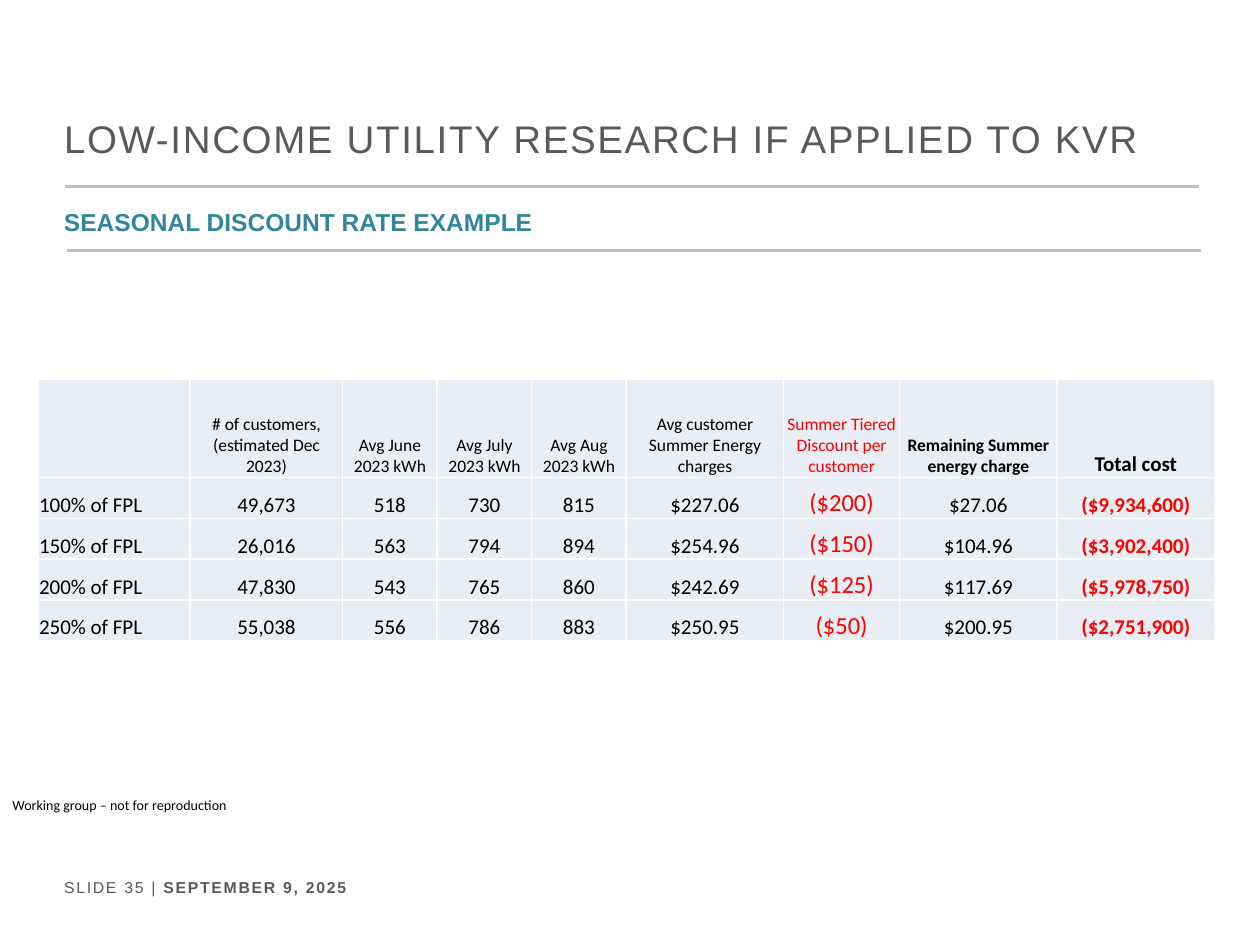
from lxml import etree
from pptx import Presentation
from pptx.dml.color import RGBColor
from pptx.enum.shapes import MSO_CONNECTOR
from pptx.enum.text import MSO_ANCHOR, PP_ALIGN
from pptx.oxml import parse_xml
from pptx.oxml.ns import nsdecls, qn
from pptx.util import Inches, Pt

STRAIGHT = MSO_CONNECTOR.STRAIGHT
TOP, MIDDLE, BOTTOM = MSO_ANCHOR.TOP, MSO_ANCHOR.MIDDLE, MSO_ANCHOR.BOTTOM
LEFT, CENTER = PP_ALIGN.LEFT, PP_ALIGN.CENTER

COLORS = {
    "heading": "595959",
    "subtitle": "31859C",
    "rule": "BFBFBF",
    "cell": "E9EDF4",
    "border": "FFFFFF",
    "text": "000000",
    "discount": "FF0000",
}

presentation = Presentation()
presentation.slide_width = Inches(10)
presentation.slide_height = Inches(7.5)
slide = presentation.slides.add_slide(presentation.slide_layouts[6])
COLUMN = presentation.slide_width // 100
ROW = presentation.slide_height // 75


def write(frame, *texts, size, color="text", font="Calibri", bold=(False,),
          align=LEFT, line_spacing=None, tracking=0):
    frame.word_wrap = True
    paragraph = frame.paragraphs[0]
    paragraph.alignment = align
    if line_spacing:
        paragraph.line_spacing = line_spacing
    for text, is_bold in zip(texts, bold):
        run = paragraph.add_run()
        run.text = text
        run.font.name = font
        run.font.size = Pt(size)
        run.font.bold = is_bold
        run.font.color.rgb = RGBColor.from_string(COLORS[color])
        if tracking:
            run.font._element.set("spc", str(tracking * 100))


def add_box(left, top, width, height, anchor=TOP):
    box = slide.shapes.add_textbox(
        int(left * COLUMN), int(top * ROW), int(width * COLUMN), int(height * ROW))
    box.text_frame.vertical_anchor = anchor
    return box.text_frame


for left, top in [(5.2, 14.8), (5.3, 19.9)]:
    rule = slide.shapes.add_connector(
        STRAIGHT, int(left * COLUMN), int(top * ROW),
        int((left + 90) * COLUMN), int(top * ROW))
    rule.line.color.rgb = RGBColor.from_string(COLORS["rule"])
    rule.line.width = Pt(1.5)
    etree.SubElement(rule._element.spPr, qn("a:effectLst"))

write(add_box(4.1, 69.2, 26.8, 2.5), "SLIDE 35 | ", "SEPTEMBER 9, 2025",
      size=9, color="heading", font="Arial", bold=(False, True), tracking=1)
write(add_box(4.1, 8.1, 91.1, 5.8, MIDDLE),
      "LOW-INCOME UTILITY RESEARCH IF APPLIED TO KVR",
      size=22, color="heading", font="Arial", tracking=1)
write(add_box(4.1, 15, 91, 4.7, MIDDLE), "SEASONAL DISCOUNT RATE EXAMPLE",
      size=14, color="subtitle", font="Arial", bold=(True,), line_spacing=1.2)
write(add_box(0, 62.7, 19.2, 2.4), "Working group – not for reproduction", size=8)

table_rows = [
    ["", "# of customers, (estimated Dec 2023)", "Avg June 2023 kWh",
     "Avg July 2023 kWh", "Avg Aug 2023 kWh", "Avg customer Summer Energy charges",
     "Summer Tiered Discount per customer", "Remaining Summer energy charge",
     "Total cost"],
    ["100% of FPL", "49,673", "518", "730", "815", "$227.06", "($200)", "$27.06",
     "($9,934,600)"],
    ["150% of FPL", "26,016", "563", "794", "894", "$254.96", "($150)", "$104.96",
     "($3,902,400)"],
    ["200% of FPL", "47,830", "543", "765", "860", "$242.69", "($125)", "$117.69",
     "($5,978,750)"],
    ["250% of FPL", "55,038", "556", "786", "883", "$250.95", "($50)", "$200.95",
     "($2,751,900)"],
]
column_widths = [12.1, 12.1, 7.5, 7.5, 7.5, 12.5, 9.2, 12.5, 12.5]
row_heights = [7.8] + [3.24] * 4
DISCOUNT, REMAINING, TOTAL = 6, 7, 8

table = slide.shapes.add_table(
    len(row_heights), len(column_widths), 3 * COLUMN, int(30.1 * ROW),
    int(sum(column_widths) * COLUMN), int(sum(row_heights) * ROW)).table
table.first_row = False
table.horz_banding = False
for column, width in zip(table.columns, column_widths):
    column.width = int(width * COLUMN)
for row, height in zip(table.rows, row_heights):
    row.height = int(height * ROW)

for row_index, values in enumerate(table_rows):
    header = row_index == 0
    for column_index, value in enumerate(values):
        cell = table.cell(row_index, column_index)
        cell.vertical_anchor = BOTTOM
        cell.margin_left = cell.margin_right = cell.margin_top = Inches(0.01)
        cell.margin_bottom = 0
        properties = cell._tc.get_or_add_tcPr()
        for side in ("lnL", "lnR", "lnT", "lnB"):
            properties.append(parse_xml(
                f'<a:{side} {nsdecls("a")} w="{Pt(1)}"><a:solidFill>'
                f'<a:srgbClr val="{COLORS["border"]}"/></a:solidFill></a:{side}>'))
        cell.fill.solid()
        cell.fill.fore_color.rgb = RGBColor.from_string(COLORS["cell"])
        if not value:
            continue
        if header:
            size = 12 if column_index == TOTAL else 10
            bold = column_index in (REMAINING, TOTAL)
            red = column_index == DISCOUNT
        else:
            size = 14 if column_index == DISCOUNT else 12
            bold = column_index == TOTAL
            red = column_index in (DISCOUNT, TOTAL)
        write(cell.text_frame, value, size=size, bold=(bold,),
              color="discount" if red else "text",
              align=CENTER if column_index else LEFT)

presentation.save("out.pptx")
